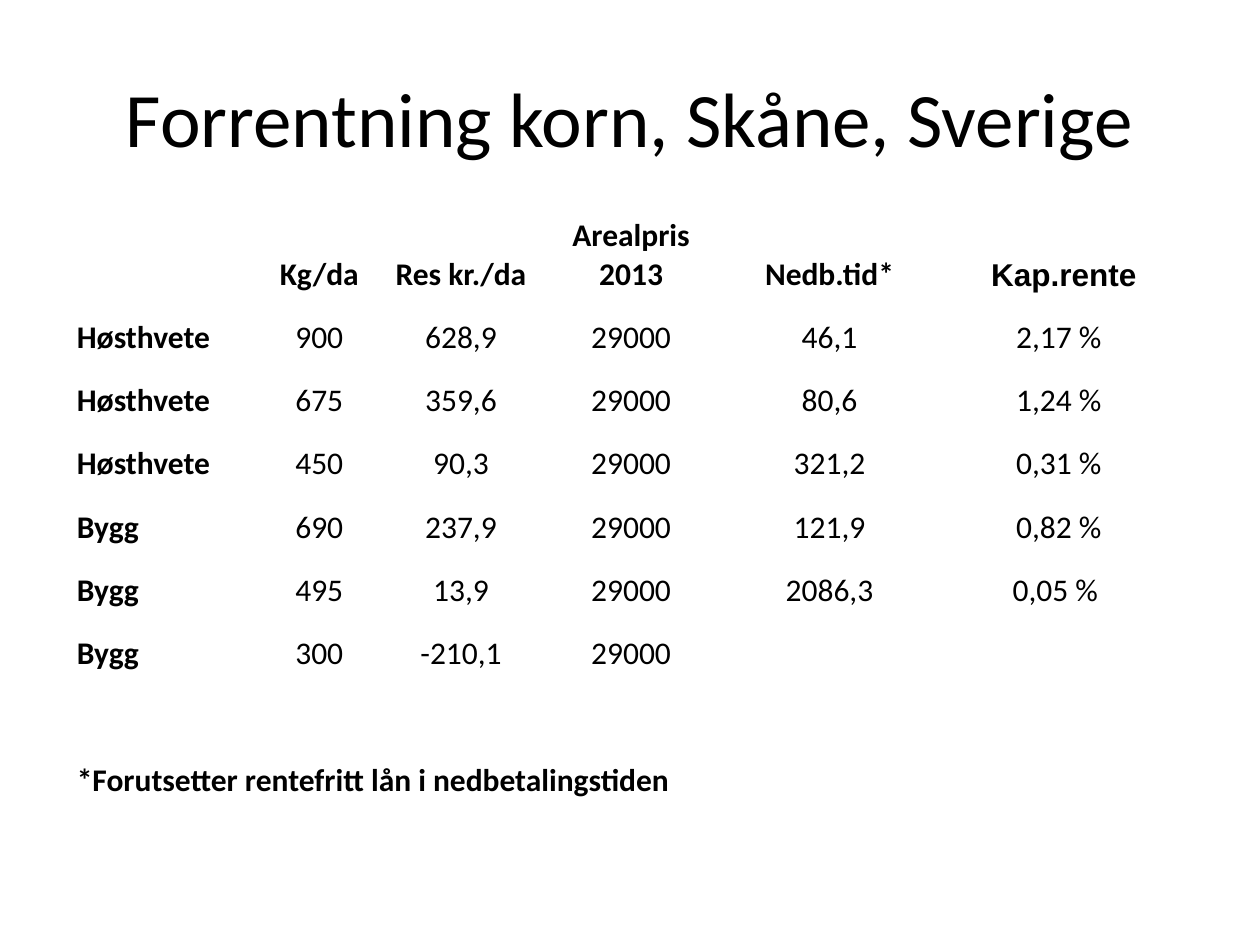
from pptx import Presentation
from pptx.dml.color import RGBColor
from pptx.enum.text import MSO_ANCHOR, PP_ALIGN
from pptx.util import Inches, Pt

LEFT, CENTER = PP_ALIGN.LEFT, PP_ALIGN.CENTER
MIDDLE, BOTTOM = MSO_ANCHOR.MIDDLE, MSO_ANCHOR.BOTTOM
COLORS = {"text": "000000", "background": "FFFFFF"}

COLUMN_WIDTHS = [0.09, 1.44, 0.99, 1.26, 1.44, 1.71, 1.93, 0.08]
HEADER_HEIGHT = 0.72
HEADINGS = ["", "Kg/da", "Res kr./da", "Arealpris 2013", "Nedb.tid*", "Kap.rente"]
CROPS = [
    ["Høsthvete", "900", "628,9", "29000", "46,1", "2,17 %"],
    ["Høsthvete", "675", "359,6", "29000", "80,6", "1,24 %"],
    ["Høsthvete", "450", "90,3", "29000", "321,2", "0,31 %"],
    ["Bygg", "690", "237,9", "29000", "121,9", "0,82 %"],
    ["Bygg", "495", "13,9", "29000", "2086,3", "0,05 % "],
    ["Bygg", "300", "-210,1", "29000"],
]
FOOTNOTE = "*Forutsetter rentefritt lån i nedbetalingstiden"


def write_text(frame, text, size=18, bold=False, font="Calibri", align=CENTER):
    paragraph = frame.paragraphs[0]
    paragraph.alignment = align
    run = paragraph.add_run()
    run.text = text
    run.font.size = Pt(size)
    run.font.bold = bold
    run.font.name = font
    run.font.color.rgb = RGBColor.from_string(COLORS["text"])


def place_title(slide, left, top, width, height):
    title = slide.shapes.title
    title.left, title.top = Inches(left), Inches(top)
    title.width, title.height = Inches(width), Inches(height)
    title.text_frame.vertical_anchor = MIDDLE
    write_text(title.text_frame, "Forrentning korn, Skåne, Sverige", size=44)


def place_returns_table(slide, left, top, width, height):
    rows = [HEADINGS, *CROPS, [], [FOOTNOTE]]
    table = slide.shapes.add_table(
        len(rows), len(COLUMN_WIDTHS),
        Inches(left), Inches(top), Inches(width), Inches(height),
    ).table
    table.first_row = table.horz_banding = False
    for column, column_width in zip(table.columns, COLUMN_WIDTHS):
        column.width = Inches(column_width)
    row_height = (height - HEADER_HEIGHT) / (len(rows) - 1)
    for index, row in enumerate(table.rows):
        row.height = Inches(row_height if index else HEADER_HEIGHT)

    for cell in table.iter_cells():
        cell.fill.solid()
        cell.fill.fore_color.rgb = RGBColor.from_string(COLORS["background"])
        cell.vertical_anchor = BOTTOM
        cell.margin_left = cell.margin_right = cell.margin_top = Inches(0.01)
        cell.margin_bottom = 0

    last_row, last_column = len(rows) - 1, len(COLUMN_WIDTHS) - 1
    table.cell(0, last_column - 1).merge(table.cell(0, last_column))
    table.cell(last_row, 1).merge(table.cell(last_row, last_column))

    for row_index, values in enumerate(rows):
        for column_index, value in enumerate(values, start=1):
            if value:
                write_text(
                    table.cell(row_index, column_index).text_frame, value,
                    bold=row_index == 0 or column_index == 1,
                    font="Arial" if value == "Kap.rente" else "Calibri",
                    align=LEFT if column_index == 1 else CENTER,
                )


def main():
    presentation = Presentation()
    presentation.slide_width, presentation.slide_height = Inches(10), Inches(7.5)
    slide = presentation.slides.add_slide(presentation.slide_layouts[5])
    place_title(slide, 0.5, 0.3, 9, 1.25)
    place_returns_table(slide, 0.51, 1.61, sum(COLUMN_WIDTHS), 4.74)
    presentation.save("out.pptx")


if __name__ == "__main__":
    main()
